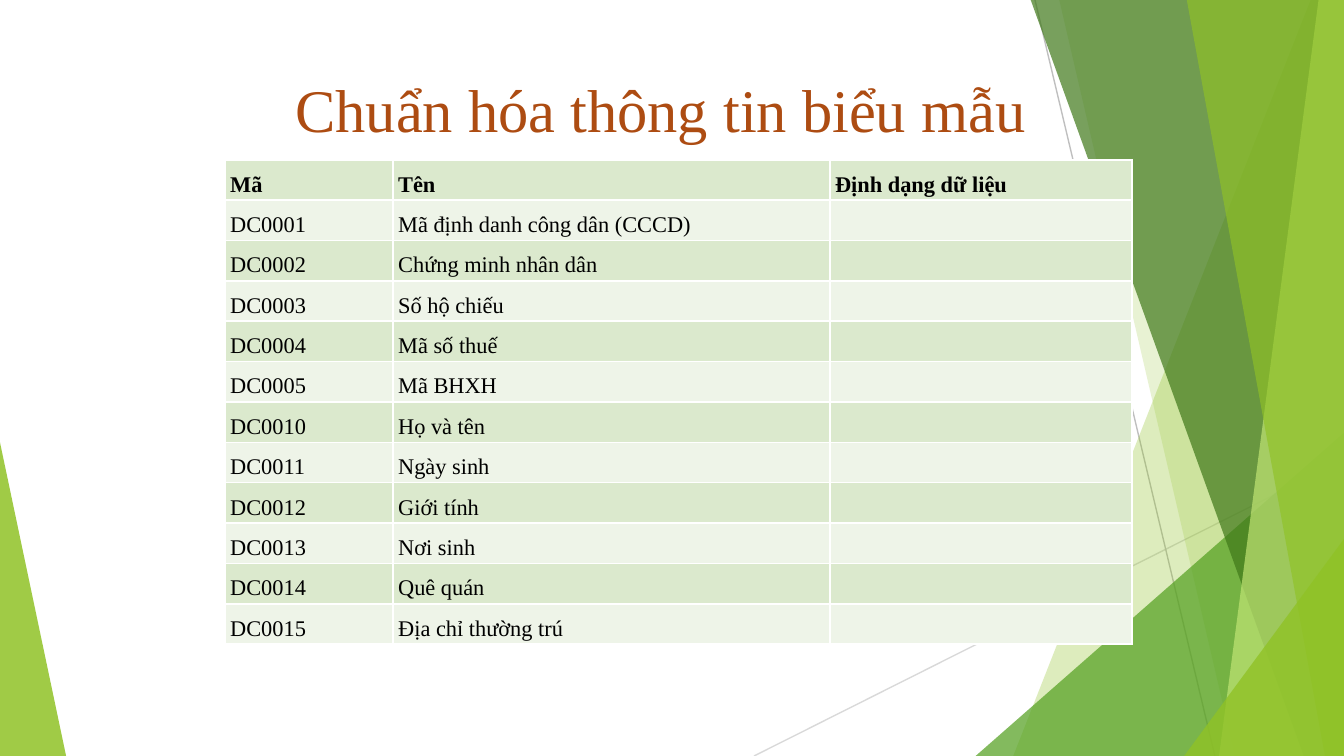
from dataclasses import dataclass

from lxml import etree
from pptx import Presentation
from pptx.dml.color import RGBColor
from pptx.enum.shapes import MSO_CONNECTOR
from pptx.enum.text import MSO_ANCHOR, PP_ALIGN
from pptx.oxml.ns import qn
from pptx.util import Cm, Pt

STRAIGHT = MSO_CONNECTOR.STRAIGHT
TOP = MSO_ANCHOR.TOP
CENTER, JUSTIFY = PP_ALIGN.CENTER, PP_ALIGN.JUSTIFY


@dataclass(frozen=True)
class Theme:
    font: str = "Times New Roman"
    title_size: float = 32.4
    body_size: float = 12
    title: str = "AD4C12"
    text: str = "000000"
    border: str = "FFFFFF"
    band_dark: str = "DBE9CD"
    band_light: str = "EEF4E8"
    lime: str = "90C226"
    green: str = "54A021"
    forest: str = "3F7819"
    pale: str = "C0E474"
    line_light: str = "D9D9D9"
    line_dark: str = "BFBFBF"


THEME = Theme()
SLIDE_W, SLIDE_H = 25.4, 14.29

HEADER = ("Mã", "Tên", "Định dạng dữ liệu")
FIELDS = [
    ("DC0001", "Mã định danh công dân (CCCD)"),
    ("DC0002", "Chứng minh nhân dân"),
    ("DC0003", "Số hộ chiếu"),
    ("DC0004", "Mã số thuế"),
    ("DC0005", "Mã BHXH"),
    ("DC0010", "Họ và tên"),
    ("DC0011", "Ngày sinh"),
    ("DC0012", "Giới tính"),
    ("DC0013", "Nơi sinh"),
    ("DC0014", "Quê quán"),
    ("DC0015", "Địa chỉ thường trú"),
]


def rgb(color):
    return RGBColor.from_string(color)


def add_facet(s, points, color, opacity):
    """Draw a translucent polygon; opacity is in percent."""
    start, *rest = [(Cm(x), Cm(y)) for x, y in dict.fromkeys(points)]
    builder = s.shapes.build_freeform(*start)
    builder.add_line_segments(rest, close=True)
    sp = builder.convert_to_shape()
    sp.shadow.inherit = False
    sp.line.fill.background()
    sp.fill.solid()
    sp.fill.fore_color.rgb = rgb(color)
    clr = sp.fill._xPr.find(".//" + qn("a:srgbClr"))
    etree.SubElement(clr, qn("a:alpha"), val=str(opacity * 1000))


def add_rule(s, x1, y1, x2, y2, color):
    line = s.shapes.add_connector(STRAIGHT, Cm(x1), Cm(y1), Cm(x2), Cm(y2))
    line.line.color.rgb = rgb(color)
    line.line.width = Pt(0.75)
    etree.SubElement(line._element.spPr, qn("a:effectLst"))


def add_backdrop(s, x, y, w, h):
    right, bottom = x + w, y + h
    # Left wedge
    add_facet(s, [(x, y + 8.36), (x + 1.25, bottom), (x, bottom)], THEME.lime, 85)
    # Thin crossing lines
    add_rule(s, x + 14.25, bottom, right, y + 8.69, THEME.line_light)
    add_rule(s, x + 19.56, y, x + 22.96, bottom, THEME.line_dark)
    # Each facet fills from a slanted edge (top x, top y, bottom x) to the right side
    facets = [
        (24.77, 0, 19.15, THEME.lime, 30),
        (20.02, 0, 23.34, THEME.lime, 20),
        (w, 8.18, 18.44, THEME.green, 72),
        (19.48, 0, 24.64, THEME.forest, 70),
        (24.92, 0, 23.04, THEME.pale, 70),
        (22.43, 0, 25.04, THEME.lime, 65),
        (w, 10.19, 22.38, THEME.lime, 80),
    ]
    for x_top, y_top, x_bottom, color, opacity in facets:
        points = [(x + x_top, y + y_top), (x + x_bottom, bottom),
                  (right, bottom), (right, y + y_top)]
        add_facet(s, points, color, opacity)


def style_runs(p, size, color, bold=False):
    for r in p.runs:
        r.font.name = THEME.font
        r.font.size = Pt(size)
        r.font.bold = bold
        r.font.color.rgb = rgb(color)


def add_title(s, x, y, w, h, text):
    tf = s.shapes.add_textbox(Cm(x), Cm(y), Cm(w), Cm(h)).text_frame
    tf.word_wrap = True
    tf.vertical_anchor = TOP
    tf.margin_top = Cm(0.25)
    p = tf.paragraphs[0]
    p.text = text
    p.alignment = CENTER
    style_runs(p, THEME.title_size, THEME.title)


def add_borders(cell):
    tc_pr = cell._tc.get_or_add_tcPr()
    for i, side in enumerate(("a:lnL", "a:lnR", "a:lnT", "a:lnB")):
        ln = etree.Element(qn(side), w=str(Pt(1)))
        fill = etree.SubElement(ln, qn("a:solidFill"))
        etree.SubElement(fill, qn("a:srgbClr"), val=THEME.border)
        tc_pr.insert(i, ln)


def fill_cell(cell, text, color, bold):
    cell.fill.solid()
    cell.fill.fore_color.rgb = rgb(color)
    add_borders(cell)
    cell.margin_left = cell.margin_right = Cm(0.1)
    cell.margin_top = cell.margin_bottom = 0
    p = cell.text_frame.paragraphs[0]
    if not text:
        # Keep empty cells from stretching the row
        etree.SubElement(p._p, qn("a:endParaRPr"), sz=str(THEME.body_size * 100))
        return
    p.text = text
    p.alignment = JUSTIFY
    p.line_spacing = 1.5
    p.space_after = Pt(8)
    style_runs(p, THEME.body_size, THEME.text, bold)


def add_field_table(s, x, y, w, h):
    rows = [HEADER] + [(code, name, "") for code, name in FIELDS]
    table = s.shapes.add_table(len(rows), len(HEADER), Cm(x), Cm(y), Cm(w), Cm(h)).table
    shares = (5, 13, 9)
    for col, share in zip(table.columns, shares):
        col.width = Cm(w * share / sum(shares))
    for i, row in enumerate(rows):
        table.rows[i].height = Cm(h / len(rows))
        band = THEME.band_light if i % 2 else THEME.band_dark
        for j, text in enumerate(row):
            fill_cell(table.cell(i, j), text, band, bold=i == 0)


def main():
    prs = Presentation()
    prs.slide_width, prs.slide_height = Cm(SLIDE_W), Cm(SLIDE_H)
    s = prs.slides.add_slide(prs.slide_layouts[6])
    add_backdrop(s, 0, 0, SLIDE_W, SLIDE_H)
    add_title(s, 4.65, 1.12, 15.67, 1.12, "Chuẩn hóa thông tin biểu mẫu")
    add_field_table(s, 4.25, 3.02, 17.15, 9.14)
    prs.save("out.pptx")


if __name__ == "__main__":
    main()
